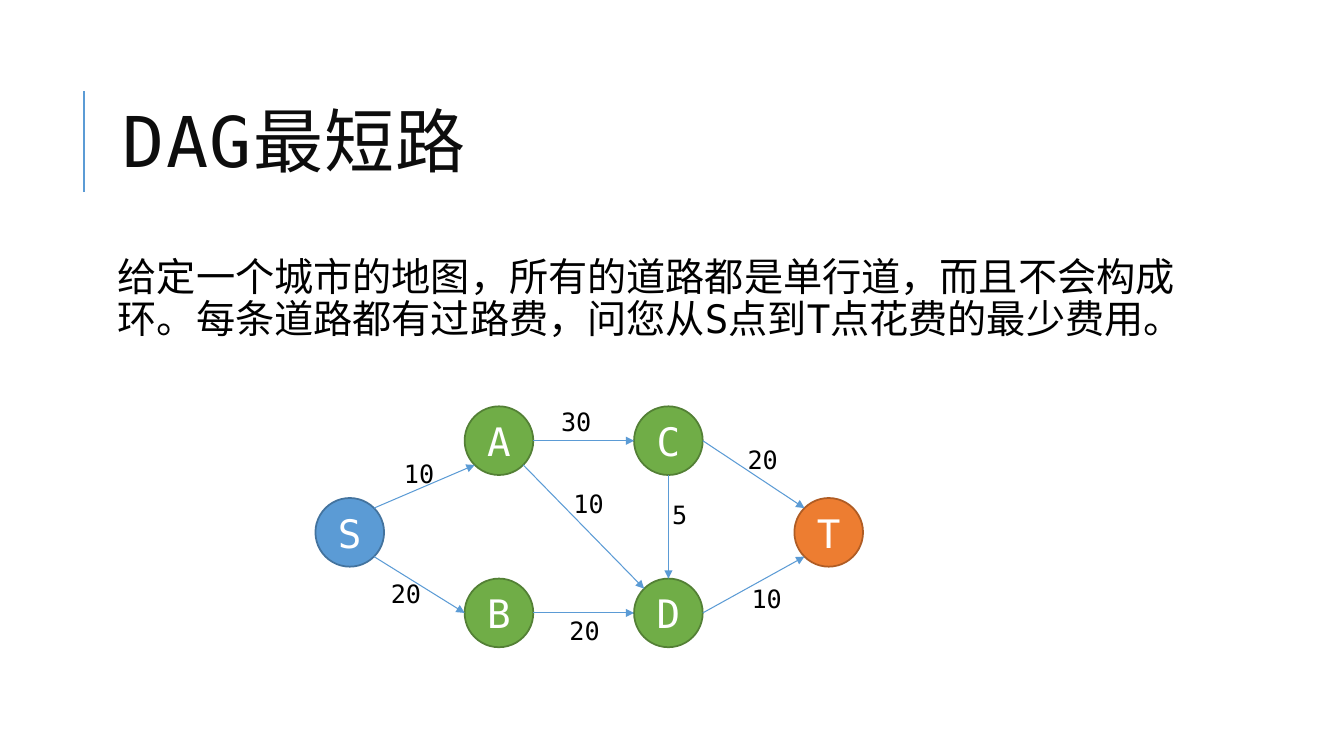
from dataclasses import dataclass
from math import cos, radians, sin

from lxml.etree import SubElement
from pptx import Presentation
from pptx.dml.color import RGBColor
from pptx.enum.lang import MSO_LANGUAGE_ID
from pptx.enum.shapes import MSO_CONNECTOR, MSO_SHAPE
from pptx.enum.text import MSO_ANCHOR, PP_ALIGN
from pptx.oxml.ns import qn
from pptx.shapes.connector import Connector
from pptx.slide import Slide
from pptx.text.text import TextFrame
from pptx.util import Cm, Pt

FONT = "DejaVu Sans Mono"
BLUE, GREEN, ORANGE = "5B9BD5", "70AD47", "ED7D31"
SIZE = 1.73
EAST, SE, SOUTH, SW, WEST, NW, NORTH, NE = range(0, 360, 45)
COLS = (7.95, 11.71, 15.98, 20.02)
HIGH, MID, LOW = 10.24, 12.55, 14.58


@dataclass
class Node:
    name: str
    left: float
    top: float
    fill: str = GREEN
    edge: str = "538035"

    def point(self, angle: int) -> tuple[float, float]:
        """Give the place on the rim at a clockwise angle from east."""
        half = SIZE / 2
        turn = radians(angle)
        return self.left + half * (1 + cos(turn)), self.top + half * (1 + sin(turn))


@dataclass
class Road:
    start: str
    leave: int
    end: str
    enter: int
    cost: str
    left: float
    top: float


NODES = (
    Node("S", COLS[0], MID, BLUE, "43739E"),
    Node("A", COLS[1], HIGH),
    Node("B", COLS[1], LOW),
    Node("C", COLS[2], HIGH),
    Node("D", COLS[2], LOW),
    Node("T", COLS[3], MID, ORANGE, "AF5C24"),
)
ROADS = (
    Road("S", NE, "A", SW, "10", 9.93, 11.43),
    Road("S", SE, "B", WEST, "20", 9.6, 14.45),
    Road("A", EAST, "C", WEST, "30", 13.89, 10.11),
    Road("A", SE, "D", NW, "10", 14.2, 12.17),
    Road("C", SOUTH, "D", NORTH, "5", 16.69, 12.45),
    Road("B", EAST, "D", WEST, "20", 14.1, 15.39),
    Road("C", EAST, "T", NW, "20", 18.59, 11.07),
    Road("D", EAST, "T", SW, "10", 18.69, 14.58),
)


def color(value: str) -> RGBColor:
    return RGBColor.from_string(value)


def write(frame: TextFrame, text: str, size: int, ink: str) -> None:
    frame.text = text
    frame.word_wrap = True
    font = frame.paragraphs[0].runs[0].font
    font.name = FONT
    font.size = Pt(size)
    font.color.rgb = color(ink)
    font.language_id = MSO_LANGUAGE_ID.SIMPLIFIED_CHINESE


def add_text(slide: Slide, left: float, top: float, width: float, height: float,
             text: str, size: int, ink: str = "000000") -> TextFrame:
    box = slide.shapes.add_textbox(Cm(left), Cm(top), Cm(width), Cm(height))
    write(box.text_frame, text, size, ink)
    return box.text_frame


def add_line(slide: Slide, start: tuple[float, float], end: tuple[float, float],
             width: float) -> Connector:
    line = slide.shapes.add_connector(
        MSO_CONNECTOR.STRAIGHT, *(Cm(value) for value in (*start, *end)))
    line.line.color.rgb = color(BLUE)
    line.line.width = Pt(width)
    SubElement(line._element.spPr, qn("a:effectLst"))
    return line


def add_node(slide: Slide, node: Node) -> None:
    shape = slide.shapes.add_shape(
        MSO_SHAPE.OVAL, Cm(node.left), Cm(node.top), Cm(SIZE), Cm(SIZE))
    shape.shadow.inherit = False
    shape.fill.solid()
    shape.fill.fore_color.rgb = color(node.fill)
    shape.line.color.rgb = color(node.edge)
    shape.line.width = Pt(1.25)
    frame = shape.text_frame
    write(frame, node.name, 28, "FFFFFF")
    frame.vertical_anchor = MSO_ANCHOR.MIDDLE
    frame.paragraphs[0].alignment = PP_ALIGN.CENTER


def add_road(slide: Slide, road: Road, nodes: dict[str, Node]) -> None:
    start = nodes[road.start].point(road.leave)
    end = nodes[road.end].point(road.enter)
    arrow = add_line(slide, start, end, 0.75)
    SubElement(arrow.line._get_or_add_ln(), qn("a:tailEnd"), type="triangle")
    add_text(slide, road.left, road.top, 2, 1.02, road.cost, 18)


def add_title(slide: Slide) -> None:
    add_line(slide, (2.12, 4.84), (2.12, 2.3), 1.5)
    frame = add_text(slide, 2.84, 1.63, 27, 4.17, "DAG最短路", 50, "0D0D0D")
    frame.vertical_anchor = MSO_ANCHOR.MIDDLE
    para = frame.paragraphs[0]
    para.line_spacing = 0.8
    para.runs[0]._r.get_or_add_rPr().set("spc", "100")


def add_body(slide: Slide) -> None:
    frame = add_text(
        slide, 2.84, 6.35, 27, 11.18,
        "给定一个城市的地图，所有的道路都是单行道，而且不会构成环。"
        "每条道路都有过路费，问您从S点到T点花费的最少费用。", 28)
    frame.margin_left = frame.margin_right = Cm(0.13)
    frame.margin_top = frame.margin_bottom = Cm(0.13)
    para = frame.paragraphs[0]
    para.line_spacing = 0.9
    para.space_before = Pt(12)
    para.space_after = Pt(2)


def main() -> None:
    deck = Presentation()
    deck.slide_width, deck.slide_height = Cm(33.87), Cm(19.05)
    slide = deck.slides.add_slide(deck.slide_layouts[6])
    add_title(slide)
    add_body(slide)
    for node in NODES:
        add_node(slide, node)
    nodes = {node.name: node for node in NODES}
    for road in ROADS:
        add_road(slide, road, nodes)
    deck.save("out.pptx")


if __name__ == "__main__":
    main()
